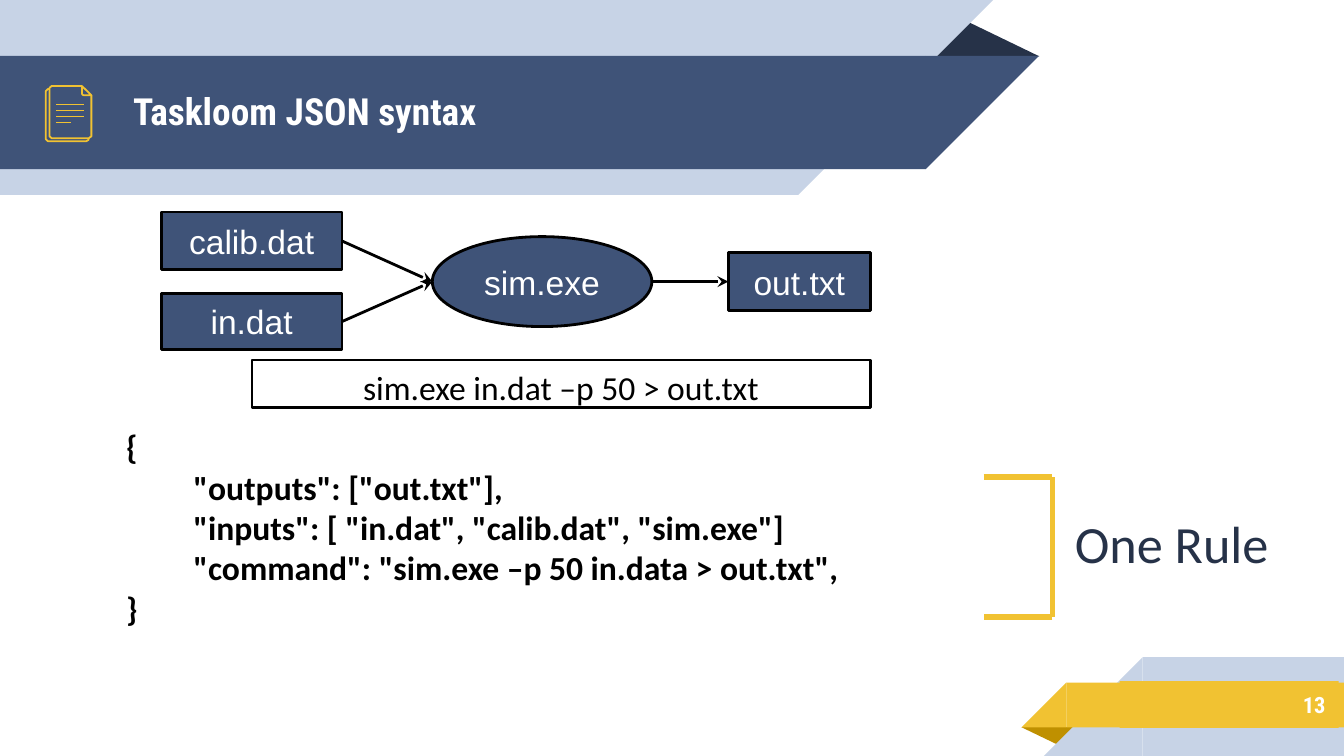
from dataclasses import dataclass

from lxml.etree import SubElement
from pptx import Presentation
from pptx.dml.color import RGBColor
from pptx.enum.shapes import MSO_CONNECTOR, MSO_SHAPE as Shape
from pptx.enum.text import MSO_ANCHOR as Anchor, PP_ALIGN as Align
from pptx.oxml.ns import qn
from pptx.util import Pt


@dataclass(frozen=True)
class Theme:
    navy: str = "263248"
    blue: str = "3F5378"
    pale: str = "C7D3E6"
    gold: str = "F1C232"
    bronze: str = "BF9000"
    white: str = "FFFFFF"
    black: str = "000000"
    heading_font: str = "Roboto Condensed"
    body_font: str = "Calibri"
    node_font: str = "Arial"
    number_size: float = 12
    body_size: float = 18
    title_size: float = 20
    callout_size: float = 28
    icon_line: float = 0.96
    node_line: float = 1.5
    bracket_line: float = 3


THEME = Theme()


def rgb(code):
    return RGBColor.from_string(code)


def style(shape, fill=None, line=None, width=THEME.node_line):
    shape.shadow.inherit = False
    if fill:
        shape.fill.solid()
        shape.fill.fore_color.rgb = rgb(fill)
    else:
        shape.fill.background()
    if line:
        shape.line.color.rgb = rgb(line)
        shape.line.width = Pt(width)
    else:
        shape.line.fill.background()
    return shape


def add_block(slide, kind, box, fill=None, line=None):
    return style(slide.shapes.add_shape(kind, *map(Pt, box)), fill, line)


def write(shape, lines, font, size, color, bold=False, align=Align.LEFT,
          anchor=Anchor.TOP):
    frame = shape.text_frame
    frame.word_wrap = True
    frame.vertical_anchor = anchor
    frame.text = "\n".join(lines)
    for paragraph in frame.paragraphs:
        paragraph.alignment = align
        paragraph.font.name = font
        paragraph.font.size = Pt(size)
        paragraph.font.bold = bold
        paragraph.font.color.rgb = rgb(color)
    return frame


def add_text(slide, box, lines, *args, **options):
    return write(slide.shapes.add_textbox(*map(Pt, box)), lines, *args, **options)


def add_line(slide, start, end, color, width, arrow=False):
    line = slide.shapes.add_connector(
        MSO_CONNECTOR.STRAIGHT, *(Pt(v) for v in (*start, *end)))
    line.line.color.rgb = rgb(color)
    line.line.width = Pt(width)
    if arrow:
        SubElement(line.line._get_or_add_ln(), qn("a:tailEnd"), type="stealth")
    SubElement(line._element.spPr, qn("a:effectLst"))


def add_band(slide, box, color, slant_left=False):
    """A bar whose one end is cut at 45 degrees, inside the given box."""
    x, y, w, h = box
    bar_x, tip_x, turn = (x + h, x, 270) if slant_left else (x, x + w - h, 90)
    add_block(slide, Shape.RECTANGLE, (bar_x, y, w - h, h), color)
    add_block(slide, Shape.RIGHT_TRIANGLE, (tip_x, y, h, h), color).rotation = turn


def add_fold(slide, box, color, turn=0):
    fold = add_block(slide, Shape.ISOSCELES_TRIANGLE, box, color)
    fold.adjustments[0] = 0.324
    fold.rotation = turn


def add_page_icon(slide, x, y):
    front = [(24.5, 5), (24.5, 27), (23.1, 28), (3.2, 28), (2.1, 27), (2.1, 1),
             (3.2, 0), (19.4, 0)]
    back = [(23, 28), (22.9, 28.9), (21.7, 29.6), (1.2, 29.6), (0, 28.4), (0, 2.8),
            (1.2, 1.6), (2.1, 1.6)]
    corner = [(19.4, 0), (24.5, 5), (20.5, 5), (19.7, 4.7), (19.4, 4)]
    for outline, closed in ((back, False), (front, False), (corner, True)):
        points = [(Pt(x + px), Pt(y + py)) for px, py in outline]
        builder = slide.shapes.build_freeform(*points[0])
        builder.add_line_segments(points[1:], close=closed)
        style(builder.convert_to_shape(), line=THEME.gold, width=THEME.icon_line)
    for row, length in enumerate((15, 15, 15, 8)):
        row_y = y + 9.9 + 3.2 * row
        add_line(slide, (x + 5.7, row_y), (x + 5.7 + length, row_y),
                 THEME.gold, THEME.icon_line)


def add_header(slide, x, y):
    add_fold(slide, (x + 495.6, y + 10.2, 61.2, 20), THEME.navy)
    add_band(slide, (x, y, 532, 104.4), THEME.pale)
    add_band(slide, (x, y + 30, 556.6, 60.6), THEME.blue)
    title = add_text(slide, (x + 64.2, y + 30.6, 414, 60.5),
                     ["Taskloom JSON syntax"], THEME.heading_font,
                     THEME.title_size, THEME.white, bold=True, anchor=Anchor.MIDDLE)
    title.paragraphs[0].line_spacing = 0.9
    add_page_icon(slide, x + 24.5, y + 46.1)


def add_footer(slide, x, y):
    add_fold(slide, (x, y + 37.6, 30.7, 10), THEME.bronze, turn=180)
    add_band(slide, (x + 12, y, 160.8, 53), THEME.pale, slant_left=True)
    add_band(slide, (x, y + 13.7, 172.8, 24), THEME.gold, slant_left=True)
    number = add_block(slide, Shape.RECTANGLE, (x + 52.6, y + 13, 117.4, 25),
                       THEME.gold)
    write(number, ["13"], THEME.heading_font, THEME.number_size, THEME.white,
          bold=True, align=Align.RIGHT, anchor=Anchor.MIDDLE)


def add_workflow(slide, x, y):
    nodes = {
        "calib.dat": (Shape.RECTANGLE, (x, y, 96.8, 31)),
        "in.dat": (Shape.RECTANGLE, (x, y + 43.7, 96.8, 30)),
        "sim.exe": (Shape.OVAL, (x + 145.2, y + 13.2, 117.6, 48.2)),
        "out.txt": (Shape.RECTANGLE, (x + 303.8, y + 21.8, 76, 31)),
    }
    for name, (kind, box) in nodes.items():
        node = add_block(slide, kind, box, THEME.blue, THEME.black)
        write(node, [name], THEME.node_font, THEME.body_size, THEME.white,
              align=Align.CENTER, anchor=Anchor.MIDDLE)
    for source, target in (("calib.dat", "sim.exe"), ("in.dat", "sim.exe"),
                           ("sim.exe", "out.txt")):
        (sx, sy, sw, sh), (tx, ty, _, th) = nodes[source][1], nodes[target][1]
        add_line(slide, (sx + sw, sy + sh / 2), (tx, ty + th / 2),
                 THEME.black, THEME.node_line, arrow=True)
    command = add_block(slide, Shape.RECTANGLE, (x + 48.6, y + 79.3, 331.2, 25.4),
                        line=THEME.black)
    write(command, ["sim.exe in.dat –p 50 > out.txt"], THEME.body_font,
          THEME.body_size, THEME.black, align=Align.CENTER)


def add_code(slide, box):
    lines = ["{",
             '"outputs": ["out.txt"],',
             '"inputs": [ "in.dat", "calib.dat", "sim.exe"]',
             '"command": "sim.exe –p 50 in.data > out.txt",',
             "}"]
    frame = add_text(slide, box, lines, THEME.body_font, THEME.body_size,
                     THEME.black, bold=True)
    for paragraph in frame.paragraphs:
        indent = 36 if paragraph.text in "{}" else 72
        paragraph._p.get_or_add_pPr().set("marL", str(Pt(indent)))


def add_rule_bracket(slide, box):
    x, y, w, h = box
    corners = [(x, y), (x + w, y), (x + w, y + h), (x, y + h)]
    for start, end in zip(corners, corners[1:]):
        add_line(slide, start, end, THEME.gold, THEME.bracket_line)
    add_text(slide, (x + w + 5, y + 15, 138, 33), ["One Rule"], THEME.body_font,
             THEME.callout_size, THEME.navy)


def main():
    deck = Presentation()
    deck.slide_width, deck.slide_height = Pt(720), Pt(405)
    slide = deck.slides.add_slide(deck.slide_layouts[6])
    add_header(slide, 0, 0)
    add_footer(slide, 547.2, 352)
    add_code(slide, (24.5, 224.8, 644.4, 124))
    add_workflow(slide, 86.4, 113.6)
    add_rule_bracket(slide, (527, 255.6, 36.8, 74.9))
    deck.save("out.pptx")


if __name__ == "__main__":
    main()
